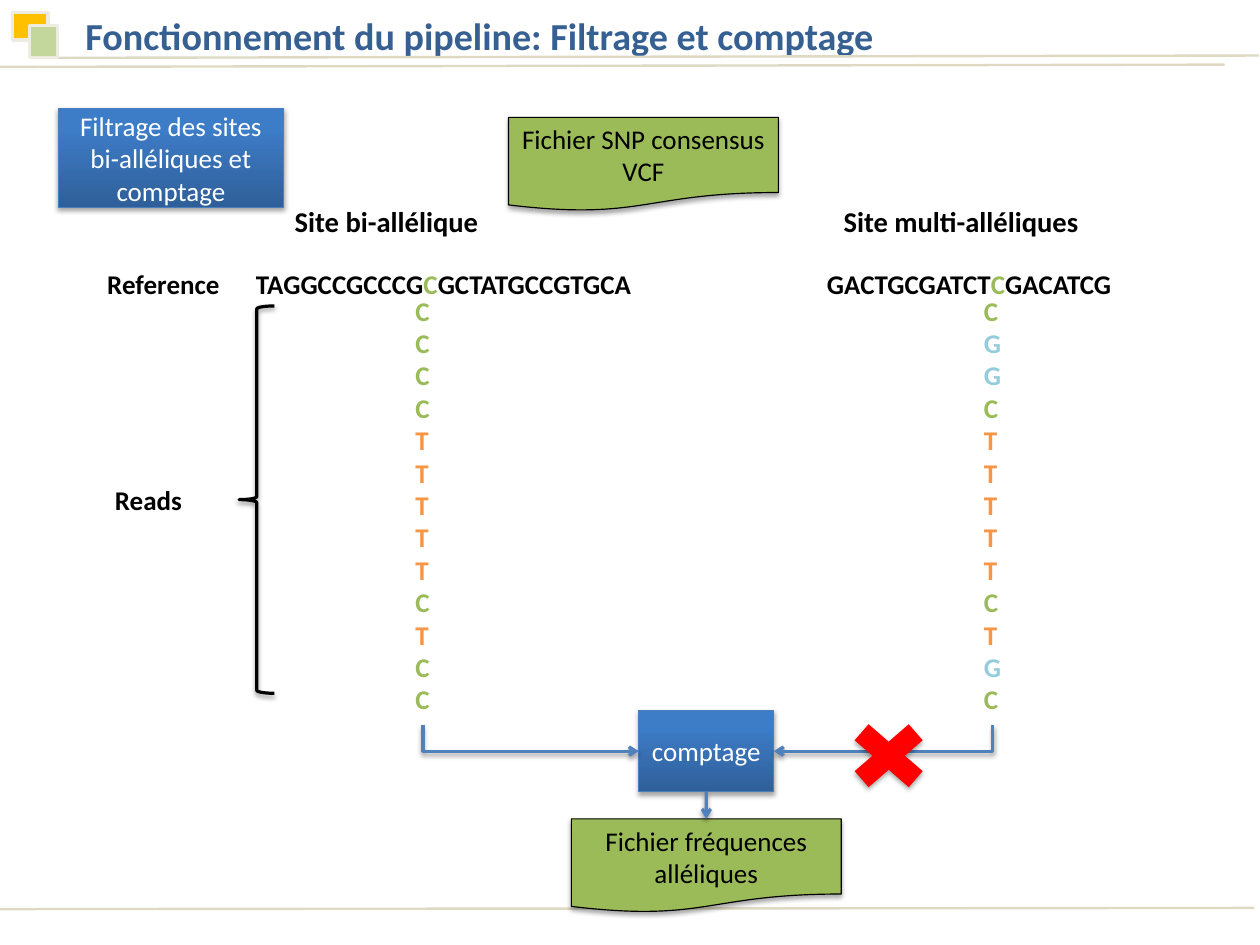
from lxml.etree import SubElement
from pptx import Presentation
from pptx.dml.color import RGBColor
from pptx.enum.shapes import MSO_CONNECTOR, MSO_SHAPE
from pptx.enum.text import MSO_ANCHOR, MSO_AUTO_SIZE, PP_ALIGN
from pptx.oxml.ns import qn
from pptx.util import Cm, Pt

WIDTH, HEIGHT = Cm(28), Cm(21)
FONT = "Calibri"

BLACK = RGBColor(0x00, 0x00, 0x00)
WHITE = RGBColor(0xFF, 0xFF, 0xFF)
RED = RGBColor(0xFF, 0x00, 0x00)
TITLE_BLUE = RGBColor(0x37, 0x60, 0x92)
ARROW_BLUE = RGBColor(0x4F, 0x81, 0xBD)
EDGE_BLUE = RGBColor(0x4B, 0x7E, 0xBC)
DARK_BLUE = RGBColor(0x2F, 0x5F, 0x99)
LIGHT_BLUE = RGBColor(0x3D, 0x7C, 0xC7)
GREEN = RGBColor(0x9B, 0xBB, 0x59)
ORANGE = RGBColor(0xF7, 0x96, 0x46)
SKY = RGBColor(0x93, 0xCD, 0xDD)
RULE_BEIGE = RGBColor(0xDD, 0xD9, 0xC3)
EDGE_BEIGE = RGBColor(0xEE, 0xEC, 0xE1)
GOLD = RGBColor(0xFF, 0xC0, 0x00)
PALE_GREEN = RGBColor(0xC3, 0xD6, 0x9B)

BASE_COLORS = {"C": GREEN, "T": ORANGE, "G": SKY}


def x(percent):
    return round(WIDTH * percent / 100)


def y(percent):
    return round(HEIGHT * percent / 100)


def place(left, top, width, height):
    """Turn percentages of the slide into lengths."""
    return x(left), y(top), x(width), y(height)


def set_font(font, size, color, bold=False):
    font.name, font.size, font.bold = FONT, Pt(size), bold
    font.color.rgb = color


def add_shadow(sp, alpha=35):
    """Cast a soft shadow straight down."""
    spPr = sp._element.spPr
    effects = spPr.find(qn("a:effectLst"))
    if effects is None:
        effects = SubElement(spPr, qn("a:effectLst"))
    shadow = SubElement(effects, qn("a:outerShdw"), blurRad=str(Pt(3.1)),
                        dist=str(Pt(1.8)), dir="5400000", rotWithShape="0")
    color = SubElement(shadow, qn("a:srgbClr"), val=str(BLACK))
    SubElement(color, qn("a:alpha"), val=str(alpha * 1000))


def add_figure(s, preset, box, fill=None, line=None, line_width=0.75):
    sp = s.shapes.add_shape(preset, *place(*box))
    sp.shadow.inherit = False
    if fill is None:
        sp.fill.background()
    else:
        sp.fill.solid()
        sp.fill.fore_color.rgb = fill
    if line is None:
        sp.line.fill.background()
    else:
        sp.line.color.rgb = line
        sp.line.width = Pt(line_width)
    return sp


def write_centred(sp, lines, color):
    tf = sp.text_frame
    tf.word_wrap = True
    tf.vertical_anchor = MSO_ANCHOR.MIDDLE
    tf.text = "\n".join(lines)
    for p in tf.paragraphs:
        p.alignment = PP_ALIGN.CENTER
        set_font(p.font, 17, color)


def add_document(s, left, top, *lines):
    sp = add_figure(s, MSO_SHAPE.FLOWCHART_DOCUMENT, (left, top, 21.42, 9.92),
                    GREEN, BLACK)
    add_shadow(sp)
    write_centred(sp, lines, BLACK)
    return sp


def add_process(s, box, text):
    sp = add_figure(s, MSO_SHAPE.FLOWCHART_PROCESS, box, line=EDGE_BLUE)
    sp.fill.gradient()
    sp.fill.gradient_angle = 90
    for stop, position, color in zip(sp.fill.gradient_stops, (0, 0.8),
                                     (DARK_BLUE, LIGHT_BLUE)):
        stop.position = position
        stop.color.rgb = color
    add_shadow(sp)
    write_centred(sp, [text], WHITE)
    return sp


def add_text(s, box, paragraphs, size=17):
    """Write bold paragraphs, each a list of (text, color) runs."""
    sp = s.shapes.add_textbox(*place(*box))
    tf = sp.text_frame
    tf.word_wrap = False
    tf.auto_size = MSO_AUTO_SIZE.SHAPE_TO_FIT_TEXT
    for i, runs in enumerate(paragraphs):
        p = tf.add_paragraph() if i else tf.paragraphs[0]
        for text, color in runs:
            r = p.add_run()
            r.text = text
            set_font(r.font, size, color, bold=True)
    return sp


def add_label(s, box, text, size=17):
    return add_text(s, box, [[(text, BLACK)]], size)


def add_sequence(s, left, width, before, site, after):
    runs = [(before, BLACK), (site, BASE_COLORS[site]), (after, BLACK)]
    return add_text(s, (left, 27.69, width, 4.72), [runs])


def add_reads(s, left, width, bases):
    return add_text(s, (left, 30.53, width, 46.19),
                    [[(base, BASE_COLORS[base])] for base in bases])


def add_rule(s, x1, y1, x2, y2):
    line = s.shapes.add_connector(MSO_CONNECTOR.STRAIGHT, x(x1), y(y1), x(x2), y(y2))
    line.line.color.rgb = RULE_BEIGE
    line.line.width = Pt(1.5)
    SubElement(line._element.spPr, qn("a:effectLst"))


def add_arrow(s, start, start_site, end, end_site, arrow_end, bent=False):
    """Join two shapes; arrow_end is headEnd (start) or tailEnd (end)."""
    kind = MSO_CONNECTOR.ELBOW if bent else MSO_CONNECTOR.STRAIGHT
    arrow = s.shapes.add_connector(kind, 0, 0, 0, 0)
    arrow.begin_connect(start, start_site)
    arrow.end_connect(end, end_site)
    arrow.line.color.rgb = ARROW_BLUE
    arrow.line.width = Pt(2)
    spPr = arrow._element.spPr
    if bent:
        spPr.find(qn("a:prstGeom")).set("prst", "bentConnector2")
    SubElement(spPr.find(qn("a:ln")), qn(f"a:{arrow_end}"), type="arrow")
    add_shadow(arrow, 38)


def add_heading(s, text):
    for ends in ((4.54, 6.12, 99.91, 5.88), (0, 7.08, 97.19, 6.84),
                 (0, 96.2, 99.55, 96.08)):
        add_rule(s, *ends)
    add_figure(s, MSO_SHAPE.RECTANGLE, (1, 1.33, 2.81, 2.9), GOLD, EDGE_BEIGE, 2)
    add_figure(s, MSO_SHAPE.RECTANGLE, (2.36, 2.73, 2.18, 3.39), PALE_GREEN,
               EDGE_BEIGE, 2)
    title = s.shapes.title
    title.left, title.top, title.width, title.height = place(6.78, 1.33, 90.02, 4.72)
    tf = title.text_frame
    tf.text = text
    tf.auto_size = MSO_AUTO_SIZE.NONE
    tf.vertical_anchor = MSO_ANCHOR.MIDDLE
    tf.margin_left = tf.margin_right = tf.margin_top = tf.margin_bottom = 0
    p = tf.paragraphs[0]
    p.alignment = PP_ALIGN.LEFT
    set_font(p.font, 24, TITLE_BLUE, bold=True)


def main():
    prs = Presentation()
    prs.slide_width, prs.slide_height = WIDTH, HEIGHT
    s = prs.slides.add_slide(prs.slide_layouts[5])
    add_heading(s, "Fonctionnement du pipeline: Filtrage et comptage")

    add_process(s, (4.63, 11.45, 17.88, 10.52),
                "Filtrage des sites bi-alléliques et comptage")
    add_document(s, 40.36, 12.42, "Fichier SNP consensus", "VCF")

    add_label(s, (22.5, 21, 16.52, 4.84), "Site bi-allélique", 18)
    add_label(s, (66.06, 21, 20.6, 4.84), "Site multi-alléliques", 18)
    add_label(s, (7.62, 27.69, 10.9, 4.72), "Reference")
    add_label(s, (8.23, 50.54, 7.17, 4.72), "Reads")
    brace = add_figure(s, MSO_SHAPE.LEFT_BRACE, (18.97, 32.38, 2.81, 40.99),
                       line=BLACK, line_width=2)
    add_shadow(brace, 38)

    add_sequence(s, 19.42, 31.76, "TAGGCCGCCCG", "C", "GCTATGCCGTGCA")
    add_sequence(s, 64.74, 24.59, "GACTGCGATCT", "C", "GACATCG")
    biallelic = add_reads(s, 32.08, 2.99, "CCCCTTTTTCTCC")
    multiallelic = add_reads(s, 77.2, 3.18, "CGGCTTTTTCTGC")

    count = add_process(s, (50.7, 75.2, 10.71, 8.59), "comptage")
    frequencies = add_document(s, 45.35, 86.65, "Fichier fréquences alléliques")
    add_arrow(s, count, 1, biallelic, 2, "headEnd", bent=True)
    add_arrow(s, count, 3, multiallelic, 2, "headEnd", bent=True)
    add_arrow(s, count, 2, frequencies, 0, "tailEnd")
    cross = add_figure(s, MSO_SHAPE.MATH_MULTIPLY, (66.4, 75.2, 8.26, 9.55), RED)
    add_shadow(cross)

    prs.save("out.pptx")


if __name__ == "__main__":
    main()
